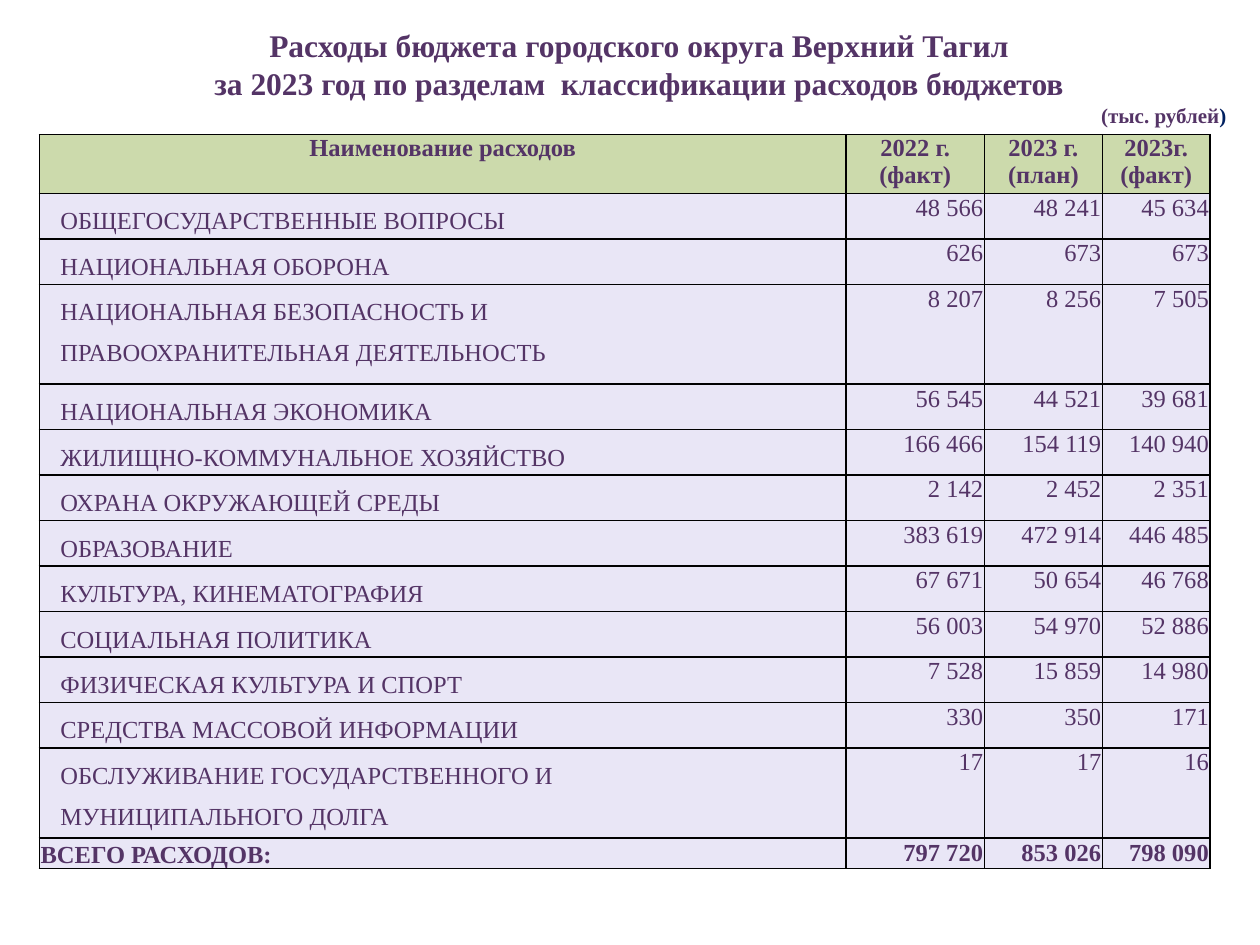
from lxml import etree
from pptx import Presentation
from pptx.dml.color import RGBColor
from pptx.enum.text import MSO_ANCHOR, MSO_AUTO_SIZE, PP_ALIGN
from pptx.oxml.ns import qn
from pptx.util import Pt

LEFT, CENTER, RIGHT = PP_ALIGN.LEFT, PP_ALIGN.CENTER, PP_ALIGN.RIGHT
TOP, BOTTOM = MSO_ANCHOR.TOP, MSO_ANCHOR.BOTTOM
FIXED = MSO_AUTO_SIZE.NONE

PURPLE = RGBColor(0x54, 0x34, 0x66)
NAVY = RGBColor(0x00, 0x20, 0x60)
GREEN = RGBColor(0xCC, 0xDA, 0xAC)
LILAC = RGBColor(0xE5, 0xE1, 0xF4)
BLACK = RGBColor(0, 0, 0)
FONT = "Times New Roman"

TITLE = [
    "Расходы бюджета городского округа Верхний Тагил",
    "за 2023 год по разделам  классификации расходов бюджетов",
]
UNIT = "(тыс. рублей"
HEAD = ["Наименование расходов", "2022 г.\n(факт)", "2023 г.\n(план)", "2023г.\n(факт)"]
ITEMS = [
    ("ОБЩЕГОСУДАРСТВЕННЫЕ ВОПРОСЫ", "48 566", "48 241", "45 634"),
    ("НАЦИОНАЛЬНАЯ ОБОРОНА", "626", "673", "673"),
    ("НАЦИОНАЛЬНАЯ БЕЗОПАСНОСТЬ И\nПРАВООХРАНИТЕЛЬНАЯ ДЕЯТЕЛЬНОСТЬ",
     "8 207", "8 256", "7 505"),
    ("НАЦИОНАЛЬНАЯ ЭКОНОМИКА", "56 545", "44 521", "39 681"),
    ("ЖИЛИЩНО-КОММУНАЛЬНОЕ ХОЗЯЙСТВО", "166 466", "154 119", "140 940"),
    ("ОХРАНА ОКРУЖАЮЩЕЙ СРЕДЫ", "2 142", "2 452", "2 351"),
    ("ОБРАЗОВАНИЕ", "383 619", "472 914", "446 485"),
    ("КУЛЬТУРА, КИНЕМАТОГРАФИЯ", "67 671", "50 654", "46 768"),
    ("СОЦИАЛЬНАЯ ПОЛИТИКА", "56 003", "54 970", "52 886"),
    ("ФИЗИЧЕСКАЯ КУЛЬТУРА И СПОРТ", "7 528", "15 859", "14 980"),
    ("СРЕДСТВА МАССОВОЙ ИНФОРМАЦИИ", "330", "350", "171"),
    ("ОБСЛУЖИВАНИЕ ГОСУДАРСТВЕННОГО И\nМУНИЦИПАЛЬНОГО ДОЛГА", "17", "17", "16"),
]
TOTAL = ["ВСЕГО РАСХОДОВ:", "797 720", "853 026", "798 090"]

COLS = [461, 79, 67.5, 61.5]
ROWS = [33.5] + [26] * len(ITEMS) + [17.5]
ROWS[3], ROWS[12] = 57, 51.5    # the two-line names


def style(para, size, align, bold):
    para.alignment = align
    font = para.font
    font.name, font.size, font.bold = FONT, Pt(size), bold
    font.color.rgb = PURPLE


def border(cell):
    props = cell._tc.get_or_add_tcPr()
    for side in ("lnL", "lnR", "lnT", "lnB"):
        line = etree.SubElement(props, qn(f"a:{side}"), w=str(Pt(1)))
        fill = etree.SubElement(line, qn("a:solidFill"))
        etree.SubElement(fill, qn("a:srgbClr"), val=str(BLACK))


def paint(cell, color, alpha=None):
    cell.fill.solid()
    cell.fill.fore_color.rgb = color
    if alpha:
        tone = cell._tc.tcPr.find(qn("a:solidFill")).find(qn("a:srgbClr"))
        etree.SubElement(tone, qn("a:alpha"), val=str(alpha * 1000))


def add_title(slide):
    box = slide.shapes.title
    box.left, box.top, box.width, box.height = Pt(22.5), Pt(11.5), Pt(685.5), Pt(65.5)
    frame = box.text_frame
    frame.word_wrap, frame.auto_size = True, FIXED
    frame.vertical_anchor = TOP
    frame.text = "\n".join(TITLE + [UNIT])
    *lines, unit = frame.paragraphs
    for para in lines:
        style(para, 18, CENTER, True)
    style(unit, 12, RIGHT, True)
    end = unit.add_run()
    end.text = ")"
    end.font.color.rgb = NAVY


def add_budget(slide):
    rows = [HEAD, *ITEMS, TOTAL]
    last = len(rows) - 1
    table = slide.shapes.add_table(len(rows), len(COLS), Pt(22.5), Pt(77),
                                   Pt(sum(COLS)), Pt(sum(ROWS))).table
    for col, width in zip(table.columns, COLS):
        col.width = Pt(width)
    for row, height in zip(table.rows, ROWS):
        row.height = Pt(height)
    for r, row in enumerate(rows):
        for c, text in enumerate(row):
            cell = table.cell(r, c)
            head, name = r == 0, c == 0 and 0 < r < last
            inset = 3.5 if head else 0.7
            cell.margin_left = Pt(12 if name else inset)
            cell.margin_right = Pt(inset)
            cell.margin_top = Pt(0 if head else 0.7)
            cell.margin_bottom = 0
            cell.vertical_anchor = BOTTOM if r == last and c == 0 else TOP
            border(cell)
            paint(cell, GREEN if head else LILAC, None if head else 81)
            cell.text = text
            align = CENTER if head else RIGHT if c else LEFT
            for para in cell.text_frame.paragraphs:
                style(para, 14, align, r in (0, last))
                if name:
                    para.line_spacing = 1.5


def main():
    deck = Presentation()
    deck.slide_width, deck.slide_height = Pt(720), Pt(540)
    slide = deck.slides.add_slide(deck.slide_layouts[5])
    add_title(slide)
    add_budget(slide)
    deck.save("out.pptx")


if __name__ == "__main__":
    main()
